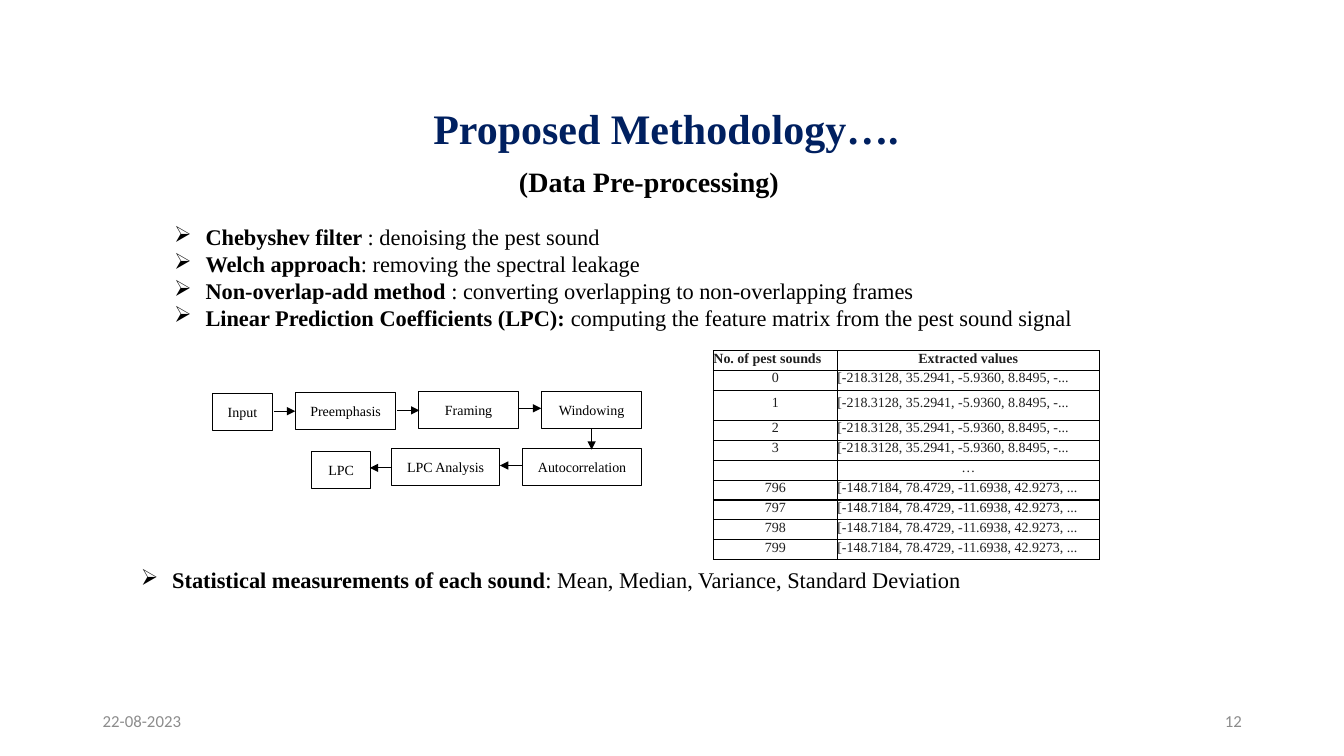
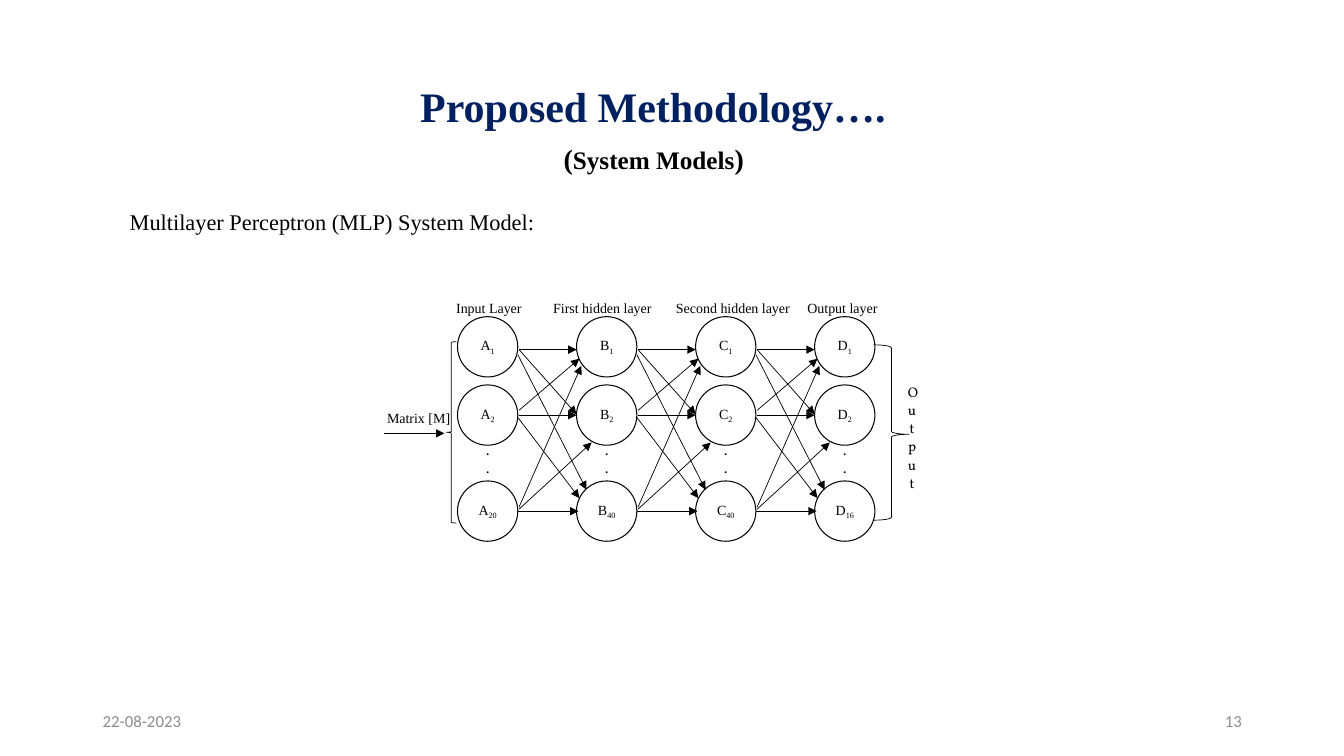
"""Build two methodology slides: data pre-processing and the perceptron model."""
from lxml import etree
from pptx import Presentation
from pptx import util as u
from pptx.dml.color import RGBColor
from pptx.enum import shapes, text
from pptx.oxml.ns import qn

COLORS = {"title": "002060", "ink": "000000", "footer": "8C8C8C", "cell": "202020"}
SERIF, SANS, LETTER = "Times New Roman", "Calibri", "Vollkorn"
ALIGN, ANCHOR, PRESET = text.PP_ALIGN, text.MSO_ANCHOR, shapes.MSO_SHAPE
LINE_GAP = u.Pt(13)

METHODS = [
    ("Chebyshev filter ", ": denoising the pest sound"),
    ("Welch approach", ": removing the spectral leakage"),
    ("Non-overlap-add method ", ": converting overlapping to non-overlapping frames"),
    ("Linear Prediction Coefficients (LPC): ",
     "computing the feature matrix from the pest sound signal"),
]
STATISTICS = [("Statistical measurements of each sound",
               ": Mean, Median, Variance, Standard Deviation")]

STEP_HEIGHT = 0.94
STEPS = [
    ("Input", 5.36, 9.91, 1.5), ("Preemphasis", 7.44, 9.88, 2.54),
    ("Framing", 10.54, 9.86, 2.54), ("Windowing", 13.64, 9.86, 2.54),
    ("Autocorrelation", 13.16, 11.3, 3.02), ("LPC Analysis", 9.86, 11.3, 2.74),
    ("LPC", 7.85, 11.38, 1.5),
]
STEP_ARROWS = [
    (6.91, 10.36, 7.44, 10.36), (10.01, 10.34, 10.57, 10.34),
    (13.08, 10.29, 13.64, 10.29), (14.91, 10.8, 14.91, 11.33),
    (13.16, 11.73, 12.6, 11.73), (9.88, 11.79, 9.32, 11.79),
]

FIRST_VALUES = "[-218.3128, 35.2941, -5.9360, 8.8495, -..."
LAST_VALUES = "[-148.7184, 78.4729, -11.6938, 42.9273, ..."
SOUND_ROWS = [
    ("No. of pest sounds", "Extracted values"),
    *((str(number), FIRST_VALUES) for number in range(4)),
    ("", "…"),
    *((str(number), LAST_VALUES) for number in range(796, 800)),
]
COLUMN_WIDTHS = (3.12, 6.6)
ROW_HEIGHT, TALL_ROW, TALL_HEIGHT = 0.5, 2, 0.76

NODE_LEFT, NODE_STEP, NODE_SIZE = 11.53, 3.0, 1.52
NODE_TOPS = (7.98, 9.7, 12.12)
LAYERS = [
    ("A", "20", "Input Layer", 12.32), ("B", "40", "First hidden layer", 15.18),
    ("C", "40", "Second hidden layer", 18.47), ("D", "16", "Output layer", 21.23),
]
EDGES = [
    (1.55, 8.81, 3.0, 8.81), (1.55, 8.81, 3.0, 10.44), (1.52, 8.94, 3.25, 12.34),
    (1.55, 10.46, 3.0, 10.46), (1.55, 10.34, 3.07, 9.04), (1.52, 10.52, 3.07, 12.55),
    (1.52, 12.88, 3.05, 12.88), (1.55, 12.83, 3.38, 11.15), (1.55, 12.78, 3.12, 9.22),
]


def cm(*lengths):
    """Turn numbers in centimetres into lengths."""
    return [u.Cm(length) for length in lengths]


def paint(color):
    """Look up a named colour."""
    return RGBColor.from_string(COLORS[color])


def add_span(para, words, size, color="ink", font=SERIF, bold=False, baseline=0):
    """Append one formatted run to a paragraph."""
    span = para.add_run()
    span.text = words
    span.font.size, span.font.name, span.font.bold = u.Pt(size), font, bold
    span.font.color.rgb = paint(color)
    if baseline:
        span._r.get_or_add_rPr().set("baseline", str(baseline * 1000))


def write(frame, lines, align=ALIGN.CENTER, anchor=ANCHOR.MIDDLE, spacing=None):
    """Fill a frame with lines, each a list of (words, format) runs."""
    frame.word_wrap = True
    frame.vertical_anchor = anchor
    for index, line in enumerate(lines):
        para = frame.add_paragraph() if index else frame.paragraphs[0]
        para.alignment = align
        if spacing:
            para.line_spacing = spacing
        for words, style in line:
            add_span(para, words, **style)


def add_text(page, at, lines, inset=None, **layout):
    """Add a text box."""
    frame = page.shapes.add_textbox(*cm(*at)).text_frame
    write(frame, lines, **layout)
    if inset is not None:
        frame.margin_left = frame.margin_right = u.Cm(inset)


def add_bullets(page, at, items):
    """Add a bulleted list of bold terms with plain explanations."""
    box = page.shapes.add_textbox(*cm(*at))
    lines = [[(term, {"size": 16, "bold": True}), (meaning, {"size": 16})]
             for term, meaning in items]
    write(box.text_frame, lines, ALIGN.JUSTIFY, ANCHOR.TOP)
    for para in box.text_frame.paragraphs:
        props = para._p.get_or_add_pPr()
        props.set("marL", str(u.Cm(0.79)))
        props.set("indent", str(u.Cm(-0.79)))
        etree.SubElement(props, qn("a:buChar"), char="➢")


def add_outline(page, preset, at, weight=0.75):
    """Add an unfilled preset shape with a black line."""
    shape = page.shapes.add_shape(preset, *cm(*at))
    shape.shadow.inherit = False
    shape.fill.background()
    shape.line.color.rgb = paint("ink")
    shape.line.width = u.Pt(weight)
    return shape


def add_arrow(page, ends, weight=0.75):
    """Add a straight arrow from the first point to the second."""
    arrow = page.shapes.add_connector(shapes.MSO_CONNECTOR.STRAIGHT, *cm(*ends))
    arrow.line.color.rgb = paint("ink")
    arrow.line.width = u.Pt(weight)
    etree.SubElement(arrow.line._get_or_add_ln(), qn("a:tailEnd"), type="triangle")
    etree.SubElement(arrow._element.spPr, qn("a:effectLst"))


def add_borders(cell):
    """Draw a black border on all four sides of a cell."""
    props = cell._tc.get_or_add_tcPr()
    for index, side in enumerate(("lnL", "lnR", "lnT", "lnB")):
        border = etree.Element(qn(f"a:{side}"), w=str(u.Pt(1)))
        fill = etree.SubElement(border, qn("a:solidFill"))
        etree.SubElement(fill, qn("a:srgbClr"), val=COLORS["ink"])
        props.insert(index, border)


def add_sound_table(page):
    """Add the table of extracted values."""
    table = page.shapes.add_table(len(SOUND_ROWS), 2, *cm(17.98, 8.84, 9.72, 5.26)).table
    table.first_row = table.horz_banding = False
    for column, width in zip(table.columns, COLUMN_WIDTHS):
        column.width = u.Cm(width)
    for row, values in enumerate(SOUND_ROWS):
        table.rows[row].height = u.Cm(TALL_HEIGHT if row == TALL_ROW else ROW_HEIGHT)
        for column, words in enumerate(values):
            cell = table.cell(row, column)
            cell.margin_left = cell.margin_right = cell.margin_top = cell.margin_bottom = 0
            cell.vertical_anchor = ANCHOR.MIDDLE
            cell.fill.background()
            add_borders(cell)
            para = cell.text_frame.paragraphs[0]
            starts_left = words.startswith(("[", "No."))
            para.alignment = ALIGN.LEFT if starts_left else ALIGN.CENTER
            para.line_spacing = u.Pt(7.7)
            para.font.size = u.Pt(10)
            if words:
                add_span(para, words, 10, "cell", bold=row == 0)


def add_page(deck, number, title_left, title_top):
    """Add a slide with the shared title, date and number."""
    page = deck.slides.add_slide(deck.slide_layouts[5])
    title = page.shapes.title
    title.left, title.top, title.width, title.height = cm(title_left, title_top, 29.46, 1.93)
    style = {"size": 30, "color": "title", "bold": True}
    write(title.text_frame, [[("Proposed Methodology….", style)]], spacing=0.9)
    footer = {"size": 12, "color": "footer", "font": SANS}
    for left, words, align in ((2.34, "22-08-2023", ALIGN.LEFT),
                               (23.93, number, ALIGN.RIGHT)):
        add_text(page, (left, 17.65, 7.62, 1.02), [[(words, footer)]], align=align)
    return page


def add_preprocessing(deck):
    """Build the data pre-processing slide."""
    page = add_page(deck, "12", 2.06, 2.34)
    add_text(page, (12.83, 4.01, 7.19, 1.12),
             [[("(Data Pre-processing)", {"size": 20, "bold": True})]],
             align=ALIGN.LEFT, anchor=ANCHOR.TOP)
    add_bullets(page, (4.14, 5.51, 28.52, 3.07), METHODS)
    add_bullets(page, (3.3, 14.15, 25.15, 0.94), STATISTICS)
    for name, left, top, width in STEPS:
        step = add_outline(page, PRESET.RECTANGLE, (left, top, width, STEP_HEIGHT))
        write(step.text_frame, [[(name, {"size": 10})]])
    for ends in STEP_ARROWS:
        add_arrow(page, ends)
    add_sound_table(page)


def add_layer(page, left, letter, last):
    """Add one column of neurons with dots before the last."""
    for top, index in zip(NODE_TOPS, ("1", "2", last)):
        node = add_outline(page, PRESET.OVAL, (left, top, NODE_SIZE, NODE_SIZE))
        write(node.text_frame, [[(letter, {"size": 10}),
                                 (index, {"size": 10, "baseline": -25})]],
              spacing=LINE_GAP)
    dot = [(".", {"size": 10, "font": LETTER})]
    add_text(page, (left + 0.5, 10.97, 0.52, 1.17), [dot, dot], inset=0, spacing=LINE_GAP)


def add_system_model(deck):
    """Build the multilayer perceptron slide."""
    page = add_page(deck, "13", 1.73, 1.78)
    paren = {"size": 20, "bold": True}
    add_text(page, (12.88, 3.45, 7.19, 1.12),
             [[("(", paren), ("System Models", {"size": 18, "bold": True}), (")", paren)]],
             anchor=ANCHOR.TOP)
    add_text(page, (3.02, 5.11, 28.52, 0.94),
             [[("Multilayer Perceptron (MLP) System Model:", {"size": 16})]],
             align=ALIGN.JUSTIFY, anchor=ANCHOR.TOP)

    add_text(page, (9.42, 9.6, 2.26, 1.85), [[("Matrix [M]", {"size": 10})]],
             spacing=LINE_GAP)
    add_arrow(page, (9.68, 10.92, 11.2, 10.92), 0.5)
    add_outline(page, PRESET.LEFT_BRACE, (11.25, 8.61, 0.25, 4.57), 0.5)
    for column, (letter, last, heading, center) in enumerate(LAYERS):
        left = NODE_LEFT + column * NODE_STEP
        add_layer(page, left, letter, last)
        add_text(page, (center - 2, 7.25, 4, 1), [[(heading, {"size": 10})]])
        if column < len(LAYERS) - 1:
            for x1, y1, x2, y2 in EDGES:
                add_arrow(page, (left + x1, y1, left + x2, y2), 0.5)
    brace = add_outline(page, PRESET.RIGHT_BRACE, (22.02, 8.69, 0.89, 4.42), 0.5)
    brace.adjustments[1] = 0.51
    add_text(page, (22.63, 9.3, 0.71, 3.4),
             [[("Output", {"size": 10, "font": LETTER})]], spacing=LINE_GAP)


def main():
    """Build and save the deck."""
    deck = Presentation()
    deck.slide_width, deck.slide_height = cm(33.87, 19.05)
    add_preprocessing(deck)
    add_system_model(deck)
    deck.save("out.pptx")


if __name__ == "__main__":
    main()
